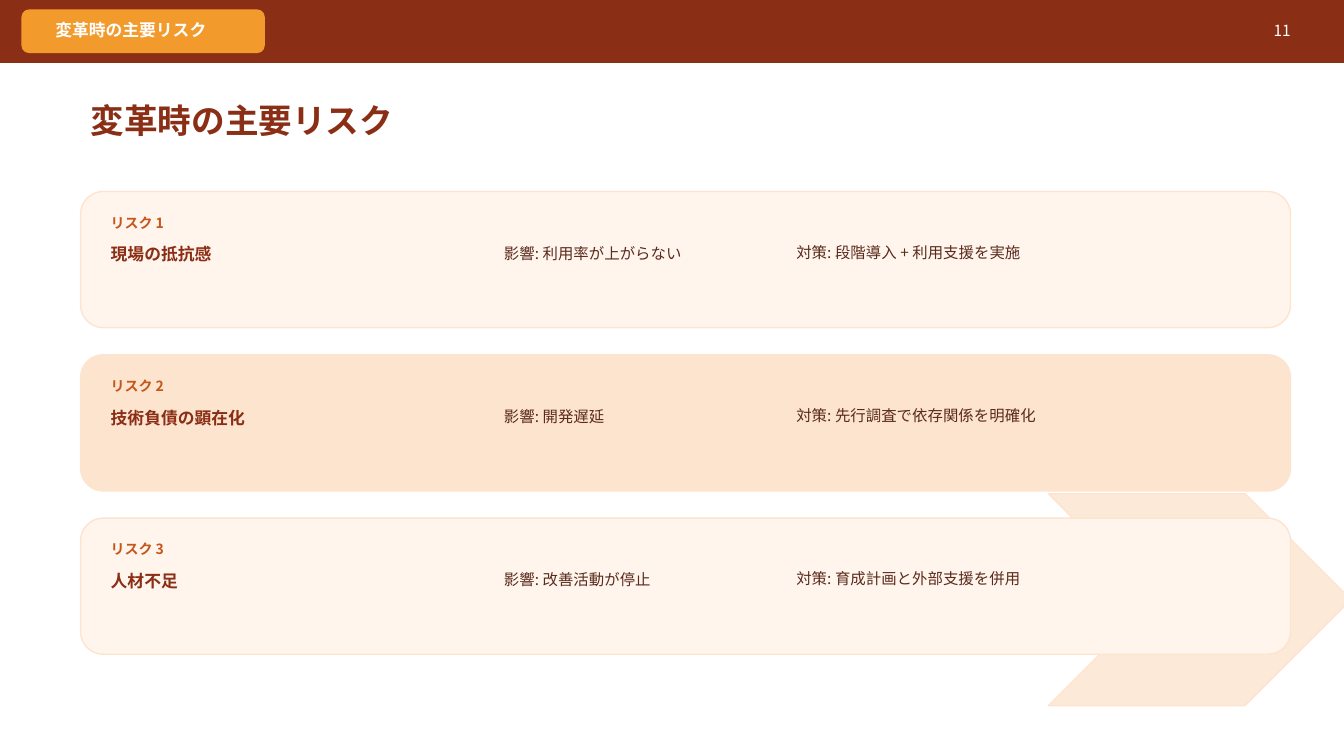
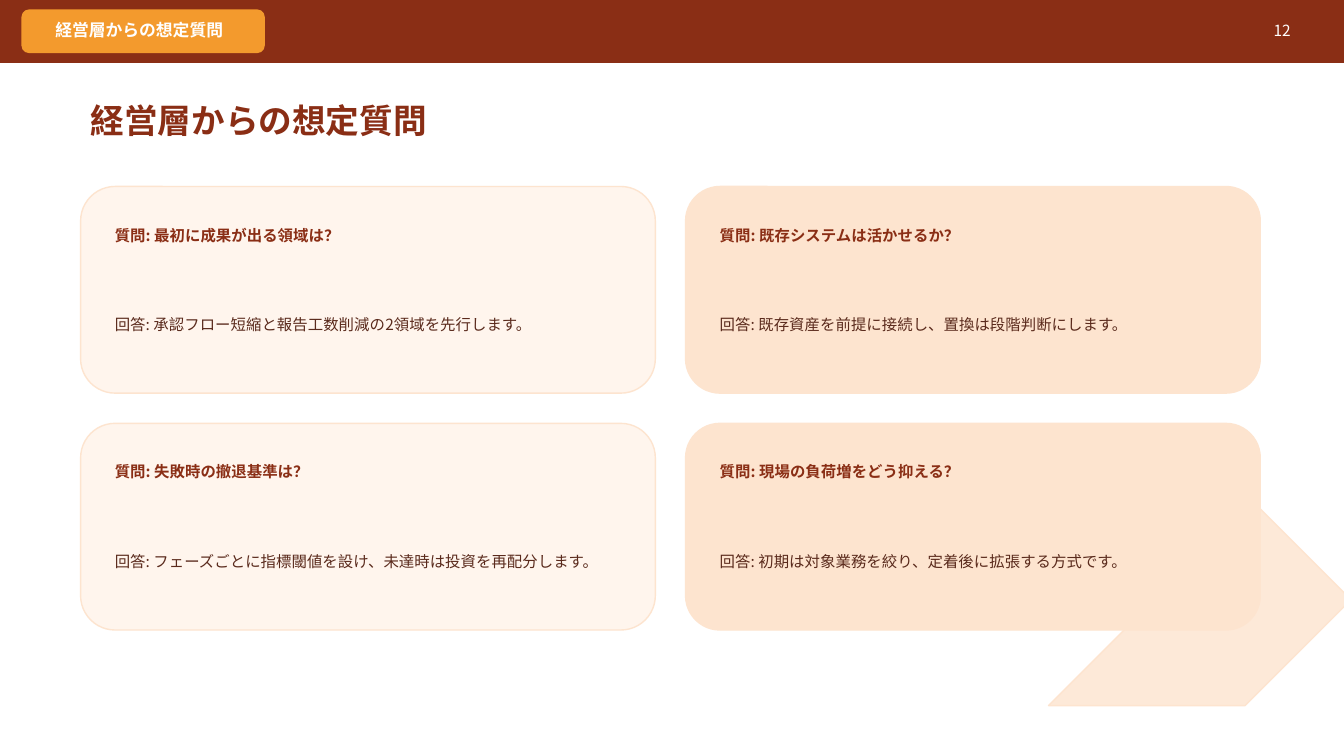
"""Build two briefing slides: key risks and expected questions."""
from dataclasses import dataclass

from lxml import etree
from pptx import Presentation
from pptx.dml.color import RGBColor
from pptx.enum import shapes, text
from pptx.oxml import ns
from pptx.util import Inches, Pt

SHAPE = shapes.MSO_SHAPE
ANCHOR = text.MSO_ANCHOR
ALIGN = text.PP_ALIGN


@dataclass(frozen=True)
class Theme:
    """Colours, fonts and type sizes shared by the slides."""
    brand: str = "8A2E15"
    tab: str = "F39A2D"
    accent: str = "C4571C"
    ink: str = "5A2A1C"
    white: str = "FFFFFF"
    pale: str = "FFF5ED"
    peach: str = "FDE4CF"
    title_font: str = "Cabin"
    body_font: str = "Noto Sans CJK JP"
    title_size: int = 24
    head_size: int = 12
    body_size: int = 11
    label_size: int = 10


T = Theme()

RISKS = [
    ("現場の抵抗感", "利用率が上がらない", "段階導入 + 利用支援を実施"),
    ("技術負債の顕在化", "開発遅延", "先行調査で依存関係を明確化"),
    ("人材不足", "改善活動が停止", "育成計画と外部支援を併用"),
]
QUESTIONS = [
    ("最初に成果が出る領域は？", "承認フロー短縮と報告工数削減の2領域を先行します。"),
    ("既存システムは活かせるか？", "既存資産を前提に接続し、置換は段階判断にします。"),
    ("失敗時の撤退基準は？", "フェーズごとに指標閾値を設け、未達時は投資を再配分します。"),
    ("現場の負荷増をどう抑える？", "初期は対象業務を絞り、定着後に拡張する方式です。"),
]


def write(tf, content, size, color, bold=False, font=T.body_font,
          align=ALIGN.LEFT, anchor=ANCHOR.MIDDLE):
    """Fill a text frame with one formatted paragraph."""
    tf.word_wrap = True
    tf.auto_size = text.MSO_AUTO_SIZE.NONE
    tf.vertical_anchor = anchor
    p = tf.paragraphs[0]
    p.text = content
    p.alignment = align
    p.font.size = Pt(size)
    p.font.bold = bold
    p.font.name = font
    p.font.color.rgb = RGBColor.from_string(color)


def add_text(s, x, y, w, h, content, size, color, **style):
    """Add a text box holding one paragraph."""
    sp = s.shapes.add_textbox(Inches(x), Inches(y), Inches(w), Inches(h))
    write(sp.text_frame, content, size, color, **style)


def add_panel(s, kind, x, y, w, h, fill, line=None, opacity=100):
    """Add a flat filled shape with a one-point outline."""
    sp = s.shapes.add_shape(kind, Inches(x), Inches(y), Inches(w), Inches(h))
    sp.shadow.inherit = False
    sp.fill.solid()
    sp.fill.fore_color.rgb = RGBColor.from_string(fill)
    sp.line.color.rgb = RGBColor.from_string(line or fill)
    sp.line.width = Pt(1)
    if opacity < 100:
        clr = sp.fill._xPr.find(ns.qn("a:solidFill"))[0]
        etree.SubElement(clr, ns.qn("a:alpha"), val=str(opacity * 1000))


def add_header(s, heading, number):
    """Draw the top band with its section tab and page number."""
    add_panel(s, SHAPE.RECTANGLE, 0, 0, 13.33, 0.62, T.brand)
    add_panel(s, SHAPE.ROUNDED_RECTANGLE, 0.22, 0.1, 2.4, 0.42, T.tab)
    add_text(s, 0.45, 0.18, 8.8, 0.24, heading, T.head_size, T.white, bold=True)
    add_text(s, 12.15, 0.18, 0.75, 0.24, str(number), T.body_size, T.white,
             align=ALIGN.RIGHT)


def add_base(prs, heading, number):
    """Add a slide with the shared chevron, header and title."""
    s = prs.slides.add_slide(prs.slide_layouts.get_by_name("Title Only"))
    add_panel(s, SHAPE.CHEVRON, 10.4, 4.9, 3, 2.1, T.peach, opacity=80)
    add_header(s, heading, number)
    title = s.shapes.title
    title.left, title.top = Inches(0.8), Inches(0.95)
    title.width, title.height = Inches(11.4), Inches(0.48)
    write(title.text_frame, heading, T.title_size, T.brand, bold=True,
          font=T.title_font)
    return s


def add_risk(s, x, y, w, h, fill, number, risk):
    """Draw one risk row with its impact and countermeasure."""
    name, impact, action = risk
    add_panel(s, SHAPE.ROUNDED_RECTANGLE, x, y, w, h, fill, T.peach)
    add_text(s, x + 0.2, y + 0.2, 1.2, 0.22, f"リスク {number}",
             T.label_size, T.accent, bold=True)
    row = y + 0.46
    add_text(s, x + 0.2, row, 3.7, 0.32, name, T.head_size, T.brand, bold=True)
    add_text(s, x + 4.1, row, 2.8, 0.3, f"影響: {impact}", T.body_size, T.ink)
    add_text(s, x + 7, row, w - 7.2, 0.58, f"対策: {action}", T.body_size,
             T.ink, anchor=ANCHOR.TOP)


def add_question(s, x, y, w, h, fill, question, answer):
    """Draw one question card with its answer."""
    add_panel(s, SHAPE.ROUNDED_RECTANGLE, x, y, w, h, fill, T.peach)
    left, width = x + 0.24, w - 0.5
    add_text(s, left, y + 0.24, width, 0.48, f"質問: {question}",
             T.body_size, T.brand, bold=True)
    add_text(s, left, y + 0.82, width, 1.1, f"回答: {answer}",
             T.body_size, T.ink)


def risk_slide(prs, heading, number):
    """Stack the risks as rows of alternating tint."""
    s = add_base(prs, heading, number)
    h, gap = 1.35, 0.27
    for i, risk in enumerate(RISKS):
        add_risk(s, 0.8, 1.9 + i * (h + gap), 12, h,
                 (T.pale, T.peach)[i % 2], i + 1, risk)


def question_slide(prs, heading, number):
    """Lay the questions out in a two-column grid."""
    s = add_base(prs, heading, number)
    w, h, gap = 5.7, 2.05, 0.3
    for i, (question, answer) in enumerate(QUESTIONS):
        row, col = divmod(i, 2)
        add_question(s, 0.8 + col * (w + gap), 1.85 + row * (h + gap), w, h,
                     (T.pale, T.peach)[col], question, answer)


def main():
    """Build and save the presentation."""
    prs = Presentation()
    prs.slide_width, prs.slide_height = Inches(13.33), Inches(7.5)
    risk_slide(prs, "変革時の主要リスク", 11)
    question_slide(prs, "経営層からの想定質問", 12)
    prs.save("out.pptx")


if __name__ == "__main__":
    main()
